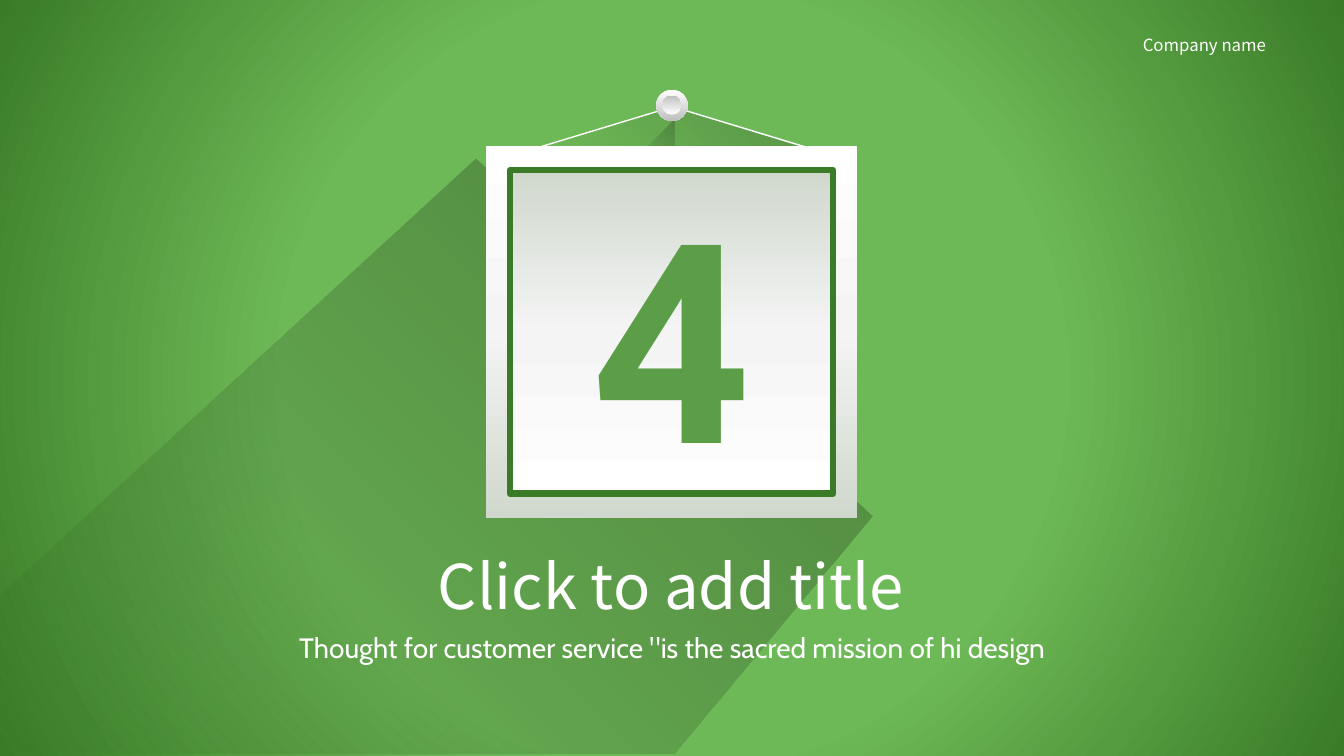
import lxml.etree
import pptx
import pptx.dml.color
import pptx.enum.shapes
import pptx.enum.text
import pptx.oxml
import pptx.oxml.ns
import pptx.util

Cm = pptx.util.Cm
Kind = pptx.enum.shapes.MSO_SHAPE
Align = pptx.enum.text.PP_ALIGN
Anchor = pptx.enum.text.MSO_ANCHOR
color = pptx.dml.color.RGBColor.from_string


def paint(fill, parent, stops, direction):
    fill.solid()
    marks = "".join(
        f'<a:gs pos="{position * 1000}"><a:srgbClr val="{tone}">'
        f'<a:alpha val="{alpha * 1000}"/></a:srgbClr></a:gs>'
        for position, tone, alpha in stops
    )
    gradient = pptx.oxml.parse_xml(
        f'<a:gradFill {pptx.oxml.ns.nsdecls("a")} rotWithShape="1">'
        f"<a:gsLst>{marks}</a:gsLst>{direction}</a:gradFill>"
    )
    solid = parent.find(pptx.oxml.ns.qn("a:solidFill"))
    parent.replace(solid, gradient)


def write(box, text, size, font, tone, align, anchor=Anchor.TOP):
    frame = box.text_frame
    frame.word_wrap = False
    frame.auto_size = pptx.enum.text.MSO_AUTO_SIZE.NONE
    frame.vertical_anchor = anchor
    frame.text = text
    para = frame.paragraphs[0]
    para.alignment = align
    para.space_before = pptx.util.Pt(0)
    para.font.size = pptx.util.Pt(size)
    para.font.name = font
    para.font.color.rgb = color(tone)
    return para


deck = pptx.Presentation()
deck.slide_width = Cm(33.87)
deck.slide_height = Cm(19.05)
page = deck.slides.add_slide(deck.slide_layouts[0])
shapes = page.shapes

backdrop = page.background.fill
backdrop.solid()
paint(
    backdrop,
    page.element.find(".//" + pptx.oxml.ns.qn("p:bgPr")),
    [(50, "6EB957", 100), (100, "397B26", 100)],
    '<a:path path="circle"><a:fillToRect l="50000" t="50000" r="50000" b="50000"/></a:path>',
)

company = shapes.add_textbox(Cm(28.55), Cm(0.74), Cm(3.96), Cm(0.76))
write(company, "Company name", 12, "Noto Sans CJK SC", "FFFFFF", Align.LEFT)

frame_shadow = shapes.build_freeform(12.22, 3.76, scale=Cm(1))
frame_shadow.add_line_segments([(21.56, 13.03), (16.64, 19.05), (0, 19.05), (0.03, 15.44)])
frame_shadow = frame_shadow.convert_to_shape()

string_shadow = shapes.add_shape(Kind.ISOSCELES_TRIANGLE, Cm(13.56), Cm(2.69), Cm(6.73), Cm(1.02))

string = shapes.add_shape(Kind.ISOSCELES_TRIANGLE, Cm(13.59), Cm(2.69), Cm(6.73), Cm(1.02))
string.shadow.inherit = False
string.fill.background()
string.line.color.rgb = color("FFFFFF")
string.line.width = pptx.util.Pt(1)

pin_shadow = shapes.build_freeform(16.1, 3.71, scale=Cm(1))
pin_shadow.add_line_segments([(16.56, 2.62), (17.3, 2.79), (16.89, 3.71)])
pin_shadow = pin_shadow.convert_to_shape()

pin = shapes.add_shape(Kind.OVAL, Cm(16.54), Cm(2.26), Cm(0.79), Cm(0.79))
pin_head = shapes.add_shape(Kind.OVAL, Cm(16.69), Cm(2.41), Cm(0.48), Cm(0.48))
frame = shapes.add_shape(Kind.RECTANGLE, Cm(12.24), Cm(3.68), Cm(9.37), Cm(9.37))
panel = shapes.add_shape(Kind.RECTANGLE, Cm(12.85), Cm(4.29), Cm(8.15), Cm(8.15))

deep = [(0, "000000", 30), (100, "000000", 0)]
soft = [(0, "000000", 20), (100, "000000", 0)]
metal = [(0, "FFFFFF", 100), (100, "BFBFBF", 100)]
paper = [(0, "FFFFFF", 100), (50, "F4F4F4", 100), (100, "D0D8CD", 100)]
for shape, stops, angle in [
    (frame_shadow, deep, 135),
    (string_shadow, soft, 135),
    (pin_shadow, soft, 135),
    (pin, metal, 90),
    (pin_head, metal, 270),
    (frame, paper, 90),
    (panel, paper, 270),
]:
    shape.shadow.inherit = False
    shape.line.fill.background()
    paint(shape.fill, shape.element.spPr, stops, f'<a:lin ang="{angle * 60000}" scaled="0"/>')

panel.line.color.rgb = color("397B26")
panel.line.width = pptx.util.Pt(4.5)
number = write(panel, "4", 199, "Roboto", "5B9E47", Align.CENTER, Anchor.MIDDLE)
number.font.bold = True

for box, place, text, size, font in [
    (shapes.title, (10.49, 13.67, 12.85, 2.13), "Click to add title", 44, "Noto Sans CJK SC"),
    (page.placeholders[1], (7.19, 15.77, 19.51, 1.12),
     'Thought for customer service "is the sacred mission of hi design', 20, "Cabin"),
]:
    box.left, box.top, box.width, box.height = map(Cm, place)
    write(box, text, size, font, "FFFFFF", Align.CENTER)
    shapes.element.append(box.element)

deck.save("out.pptx")
